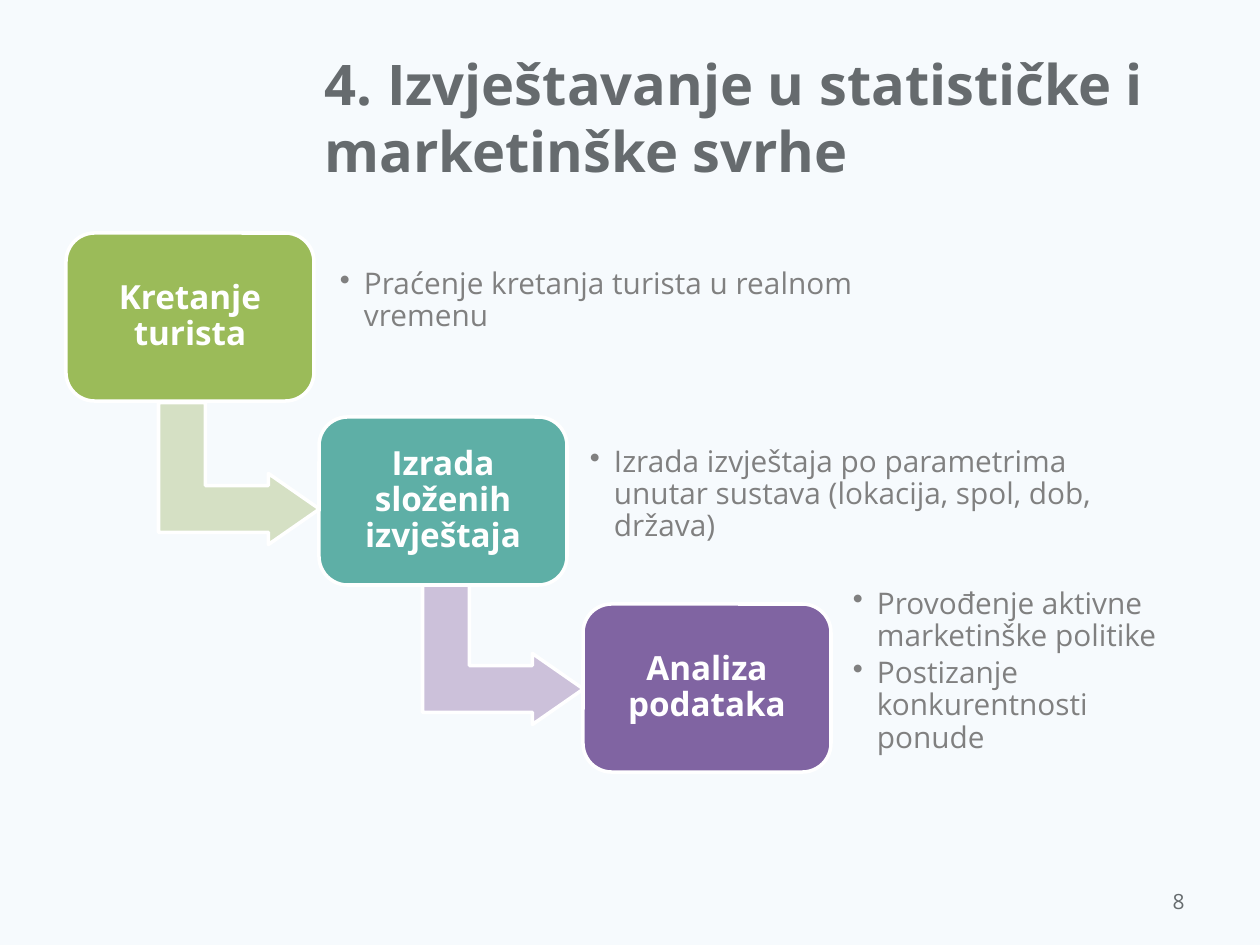
from lxml import etree
from pptx import Presentation
from pptx.dml.color import RGBColor
from pptx.enum.shapes import MSO_SHAPE
from pptx.enum.text import MSO_ANCHOR, MSO_AUTO_SIZE, PP_ALIGN
from pptx.oxml.ns import qn
from pptx.util import Pt

ROUNDED = MSO_SHAPE.ROUNDED_RECTANGLE
BENT_ARROW = MSO_SHAPE.BENT_UP_ARROW
LEFT, CENTER, RIGHT = PP_ALIGN.LEFT, PP_ALIGN.CENTER, PP_ALIGN.RIGHT
TOP, MIDDLE = MSO_ANCHOR.TOP, MSO_ANCHOR.MIDDLE

FONT = "Open Sans"
EMU_PER_PX = 914400 / 126
COLORS = {
    "background": "F6FAFD", "heading": "666B6E", "detail": "808080",
    "white": "FFFFFF", "green": "9BBB59", "light_green": "D5E0C4",
    "teal": "5EAFA6", "purple": "8064A2", "light_purple": "CCC1DA",
}


def px(value):
    return round(value * EMU_PER_PX)


def rgb(name):
    return RGBColor.from_string(COLORS[name])


def add_bullet(paragraph, indent):
    properties = paragraph._p.get_or_add_pPr()
    properties.set("marL", str(px(indent)))
    properties.set("indent", str(-px(indent)))
    etree.SubElement(properties, qn("a:buChar")).set("char", "•")


def write_text(frame, *lines, size, color, bold=False, align=LEFT, anchor=MIDDLE,
               inset=None, spacing=None, after=None, bullet_indent=None):
    frame.word_wrap = True
    frame.auto_size = MSO_AUTO_SIZE.NONE
    frame.vertical_anchor = anchor
    if inset is not None:
        frame.margin_left = frame.margin_right = px(inset)
        frame.margin_top = frame.margin_bottom = px(inset)
    for index, line in enumerate(lines):
        paragraph = frame.add_paragraph() if index else frame.paragraphs[0]
        paragraph.text = line
        if bullet_indent:
            add_bullet(paragraph, bullet_indent)
        paragraph.alignment = align
        if spacing:
            paragraph.line_spacing = spacing
        if after:
            paragraph.space_after = Pt(after)
        font = paragraph.runs[0].font
        font.name, font.size, font.bold = FONT, Pt(size), bold
        font.color.rgb = rgb(color)


class SlideBuilder:
    def __init__(self, slide):
        self.slide = slide
        fill = slide.background.fill
        fill.solid()
        fill.fore_color.rgb = rgb("background")

    def title(self, text, left, top, width, height):
        heading = self.slide.shapes.title
        heading.left, heading.top = px(left), px(top)
        heading.width, heading.height = px(width), px(height)
        write_text(heading.text_frame, text, size=32, color="heading", bold=True)

    def shape(self, kind, left, top, width, height, color, adjustments):
        shape = self.slide.shapes.add_shape(kind, px(left), px(top), px(width), px(height))
        shape.shadow.inherit = False
        shape.fill.solid()
        shape.fill.fore_color.rgb = rgb(color)
        shape.line.color.rgb = rgb("white")
        shape.line.width = Pt(2)
        for index, value in enumerate(adjustments):
            shape.adjustments[index] = value
        return shape

    def step(self, text, left, top, color):
        box = self.shape(ROUNDED, left, top, 248, 168, color, [0.17])
        write_text(box.text_frame, text, size=19, color="white", bold=True,
                   align=CENTER, inset=10, spacing=0.9)

    def arrow(self, left, top, color):
        arrow = self.shape(BENT_ARROW, left, top, 142, 161, color, [0.33, 0.25, 0.36])
        arrow.rotation = 90

    def text(self, lines, left, top, width, height, **style):
        box = self.slide.shapes.add_textbox(px(left), px(top), px(width), px(height))
        write_text(box.text_frame, *lines, **style)

    def details(self, lines, left, top, width, height, anchor=MIDDLE):
        self.text(lines, left, top, width, height, size=17, color="detail", anchor=anchor,
                  inset=9, spacing=0.9, after=3, bullet_indent=24)


def main():
    presentation = Presentation()
    presentation.slide_width, presentation.slide_height = px(1260), px(945)
    title_only = presentation.slide_layouts[5]
    builder = SlideBuilder(presentation.slides.add_slide(title_only))

    builder.title("4. Izvještavanje u statističke i marketinške svrhe", 312, 38, 885, 157)

    # Arrows leading from one step to the next
    builder.arrow(168, 393, "light_green")
    builder.arrow(432, 573, "light_purple")

    # Descending steps
    for step, left, top, color in [
        ("Kretanje turista", 66, 233, "green"),
        ("Izrada složenih izvještaja", 319, 417, "teal"),
        ("Analiza podataka", 583, 604, "purple"),
    ]:
        builder.step(step, left, top, color)

    # Details beside each step
    builder.details(["Praćenje kretanja turista u realnom vremenu"],
                    331, 260, 641, 113, anchor=TOP)
    builder.details(["Izrada izvještaja po parametrima unutar sustava "
                     "(lokacija, spol, dob, država)"], 581, 413, 575, 164)
    builder.details(["Provođenje aktivne marketinške politike",
                     "Postizanje konkurentnosti ponude"], 844, 604, 353, 135)

    # Page number
    builder.text(["8"], 903, 876, 294, 50, size=12, color="heading", align=RIGHT)

    presentation.save("out.pptx")


if __name__ == "__main__":
    main()
